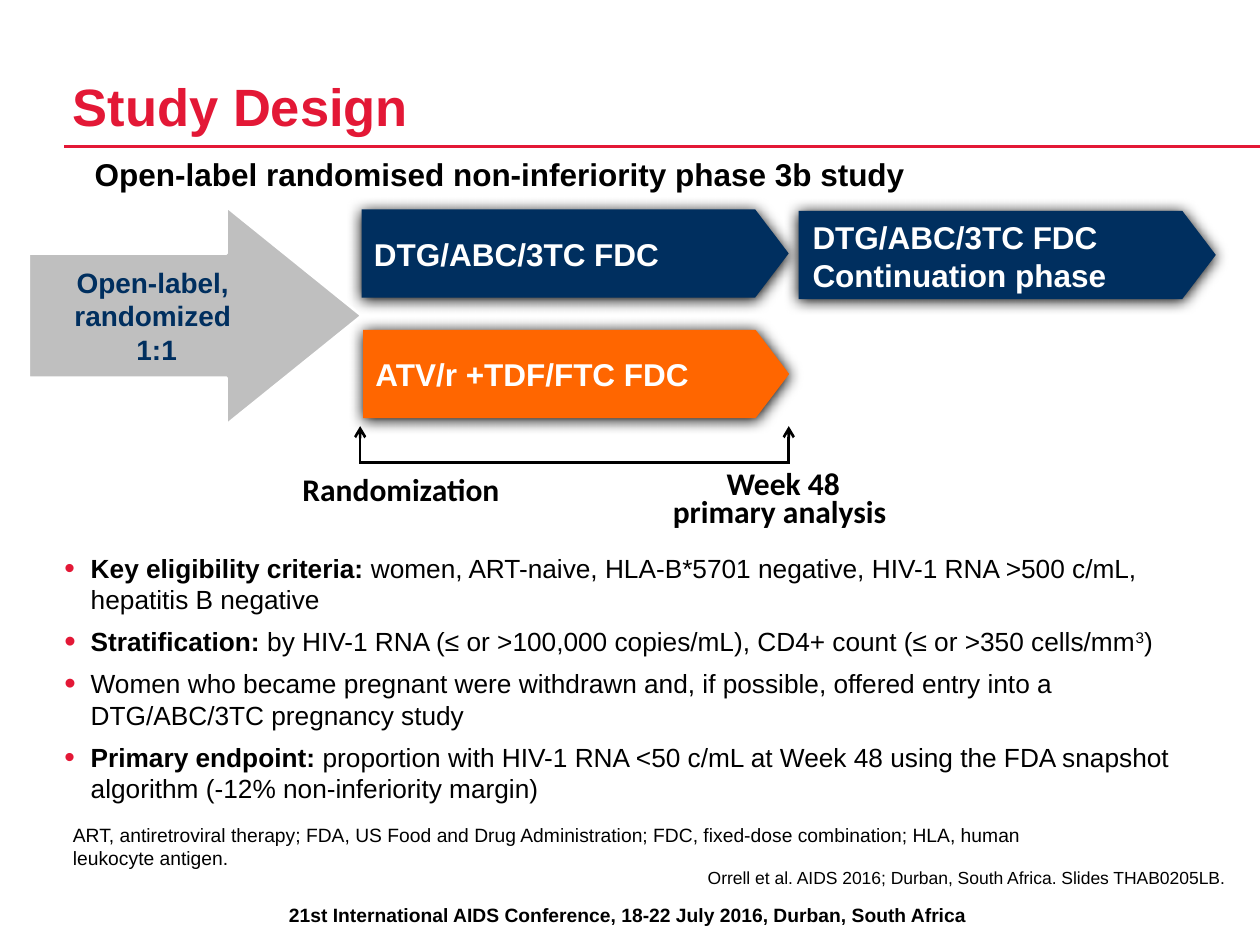
from pptx import Presentation, util as u
from pptx.dml.color import RGBColor
from pptx.enum import shapes, text
from pptx.oxml import parse_xml
from pptx.oxml.ns import nsdecls
from lxml import etree

RED = RGBColor(0xE3, 0x18, 0x36)
NAVY = RGBColor(0x00, 0x2F, 0x5F)
ORANGE = RGBColor(0xFF, 0x66, 0x00)
GREY = RGBColor(0xBF, 0xBF, 0xBF)
BLACK = RGBColor(0, 0, 0)
WHITE = RGBColor(255, 255, 255)
LEFT, CENTER, RIGHT = (text.PP_ALIGN.LEFT, text.PP_ALIGN.CENTER,
                       text.PP_ALIGN.RIGHT)
TOP, MIDDLE, BOTTOM = (text.MSO_ANCHOR.TOP, text.MSO_ANCHOR.MIDDLE,
                       text.MSO_ANCHOR.BOTTOM)

prs = Presentation()
prs.slide_width, prs.slide_height = u.Cm(25.4), u.Cm(19.05)
s = prs.slides.add_slide(prs.slide_layouts[6])


def write(sp, paras, size, color=BLACK, bold=False, font="Arial", wrap=True,
          anchor=TOP, inset=True, **para):
    """Fill a shape; each paragraph is a list of (words, run format) pairs."""
    tf = sp.text_frame
    tf.word_wrap, tf.vertical_anchor = wrap, anchor
    if not inset:
        tf.margin_left = tf.margin_top = tf.margin_right = tf.margin_bottom = 0
    for i, runs in enumerate(paras):
        p = tf.paragraphs[0] if i == 0 else tf.add_paragraph()
        for name, value in para.items():
            setattr(p, name, value)
        for words, extra in runs:
            for j, part in enumerate(words.split("\n")):
                if j:
                    p.add_line_break()
                r = p.add_run()
                r.text = part
                fmt = {"size": u.Pt(size), "bold": bold, "name": font, **extra}
                for name, value in fmt.items():
                    setattr(r.font, name, value)
                r.font.color.rgb = color
    return tf


def line(x1, y1, x2, y2, color, width, arrow=False):
    c = s.shapes.add_connector(shapes.MSO_CONNECTOR.STRAIGHT,
                               u.Cm(x1), u.Cm(y1), u.Cm(x2), u.Cm(y2))
    c.line.color.rgb, c.line.width = color, u.Pt(width)
    if arrow:
        c.line._get_or_add_ln().append(
            parse_xml(f'<a:tailEnd {nsdecls("a")} type="arrow"/>'))
    c._element.spPr.append(parse_xml(f'<a:effectLst {nsdecls("a")}/>'))


# Rule under the title
line(1.3, 2.95, 25.4, 2.95, RED, 2)

# Plain text boxes: place, words, format
flush = {"inset": False}
label = {"size": 18, "bold": True, "font": "Calibri", "wrap": False,
         "anchor": MIDDLE, "alignment": CENTER, **flush}
boxes = [
    ((0.15, 18.08, 25.02, 0.74),
     "21st International AIDS Conference, 18-22 July 2016, Durban, South Africa",
     {"size": 11, "bold": True, "alignment": CENTER}),
    ((1.47, 0.43, 20.96, 2.34), "Study Design",
     {"size": 30, "color": RED, "bold": True, "anchor": BOTTOM,
      "line_spacing": u.Pt(35), **flush}),
    ((1.91, 3.12, 17.83, 0.79),
     "Open-label randomised non-inferiority phase 3b study",
     {"size": 18, "bold": True, **flush}),
    ((13.49, 9.32, 4.6, 1.6), "Week 48\nprimary analysis ",
     {"line_spacing": u.Pt(16), **label}),
    ((5.89, 9.37, 4.39, 0.99), "Randomization", label),
    ((1.47, 16.59, 23.22, 1.14),
     "ART, antiretroviral therapy; FDA, US Food and Drug Administration; "
     "FDC, fixed-dose combination; HLA, human\nleukocyte antigen.",
     {"size": 11, **flush}),
    ((1.47, 17.48, 23.22, 0.51),
     "Orrell et al. AIDS 2016; Durban, South Africa. Slides THAB0205LB.",
     {"size": 10, "alignment": RIGHT, **flush}),
]
for place, words, fmt in boxes:
    write(s.shapes.add_textbox(*map(u.Cm, place)), [[(words, {})]], **fmt)

# Study timeline bracket
for x in (7.26, 15.9):
    line(x, 9.32, x, 8.59, BLACK, 1.5, arrow=True)
line(7.24, 9.32, 15.93, 9.32, BLACK, 1.5)

# Treatment arms
arm_text = {"size": 18, "color": WHITE, "bold": True, "wrap": False,
            "alignment": LEFT}
arms = [
    (7.29, 4.22, 8.61, NAVY, "DTG/ABC/3TC FDC"),
    (16.1, 4.25, 8.41, NAVY, ""),
    (7.32, 6.65, 8.59, ORANGE, "ATV/r +TDF/FTC FDC"),
]
for x, y, w, color, words in arms:
    sp = s.shapes.add_shape(shapes.MSO_SHAPE.PENTAGON,
                            u.Cm(x), u.Cm(y), u.Cm(w), u.Cm(1.78))
    sp.adjustments[0] = 0.38
    sp.fill.solid()
    sp.fill.fore_color.rgb = color
    sp.line.fill.background()
    sp._element.spPr.append(parse_xml(
        f'<a:effectLst {nsdecls("a")}><a:outerShdw blurRad="{u.Pt(8.5)}" '
        f'dist="{u.Pt(1)}" dir="5400000" algn="ctr" rotWithShape="0">'
        '<a:srgbClr val="000000"/></a:outerShdw></a:effectLst>'))
    if words:
        write(sp, [[(words, {})]], anchor=MIDDLE, **arm_text)

# Continuation phase caption
sp = s.shapes.add_textbox(u.Cm(16.38), u.Cm(4.39), u.Cm(5.99), u.Cm(2.31))
write(sp, [[("DTG/ABC/3TC FDC \nContinuation phase", {})]], inset=False,
      **arm_text)

# Randomization arrow
sp = s.shapes.add_shape(shapes.MSO_SHAPE.RIGHT_ARROW,
                        u.Cm(0.58), u.Cm(4.17), u.Cm(6.71), u.Cm(4.39))
sp.adjustments[0], sp.adjustments[1] = 0.57, 0.62
sp.shadow.inherit = False
sp.fill.solid()
sp.fill.fore_color.rgb = GREY
sp.line.color.rgb, sp.line.width = WHITE, u.Pt(1.5)
write(sp, [[("Open-label, ", {})], [("randomized \n1:1", {})]], 16, NAVY,
      bold=True, wrap=False, anchor=MIDDLE, alignment=CENTER)

# Key points, each with its bullet size in percent
strong = {"bold": True}
points = [
    (115, [("Key eligibility criteria: ", strong),
           ("women, ART-naive, HLA-B*5701 negative, HIV-1 RNA >500 c/mL, "
            "hepatitis B negative", {})]),
    (125, [("Stratification: ", strong),
           ("by HIV-1 RNA (≤ or >100,000 copies/mL), CD4+ count "
            "(≤ or >350 cells/mm", {}), ("3", {}), (")", {})]),
    (125, [("Women who became pregnant were withdrawn and, if possible, "
            "offered entry into a DTG/ABC/3TC pregnancy study", {})]),
    (115, [("Primary endpoint: ", strong),
           ("proportion with HIV-1 RNA <50 c/mL at Week 48 using the FDA "
            "snapshot algorithm (-12% non-inferiority margin)", {})]),
]
sp = s.shapes.add_textbox(u.Cm(1.3), u.Cm(11.13), u.Cm(23.19), u.Cm(5.21))
tf = write(sp, [runs for _, runs in points], 15, inset=False,
           space_after=u.Pt(6))
for p, (percent, _) in zip(tf.paragraphs, points):
    pPr = p._p.get_or_add_pPr()
    pPr.set("marL", str(u.Cm(0.53)))
    pPr.set("indent", str(-u.Cm(0.53)))
    bullet = parse_xml(
        f'<a:pPr {nsdecls("a")}><a:buClr><a:srgbClr val="{RED}"/></a:buClr>'
        f'<a:buSzPct val="{percent}000"/><a:buFont typeface="Arial"/>'
        '<a:buChar char="•"/></a:pPr>')
    pPr.extend(list(bullet))
tf.paragraphs[1].runs[2].font._element.set("baseline", "30000")

prs.save("out.pptx")
